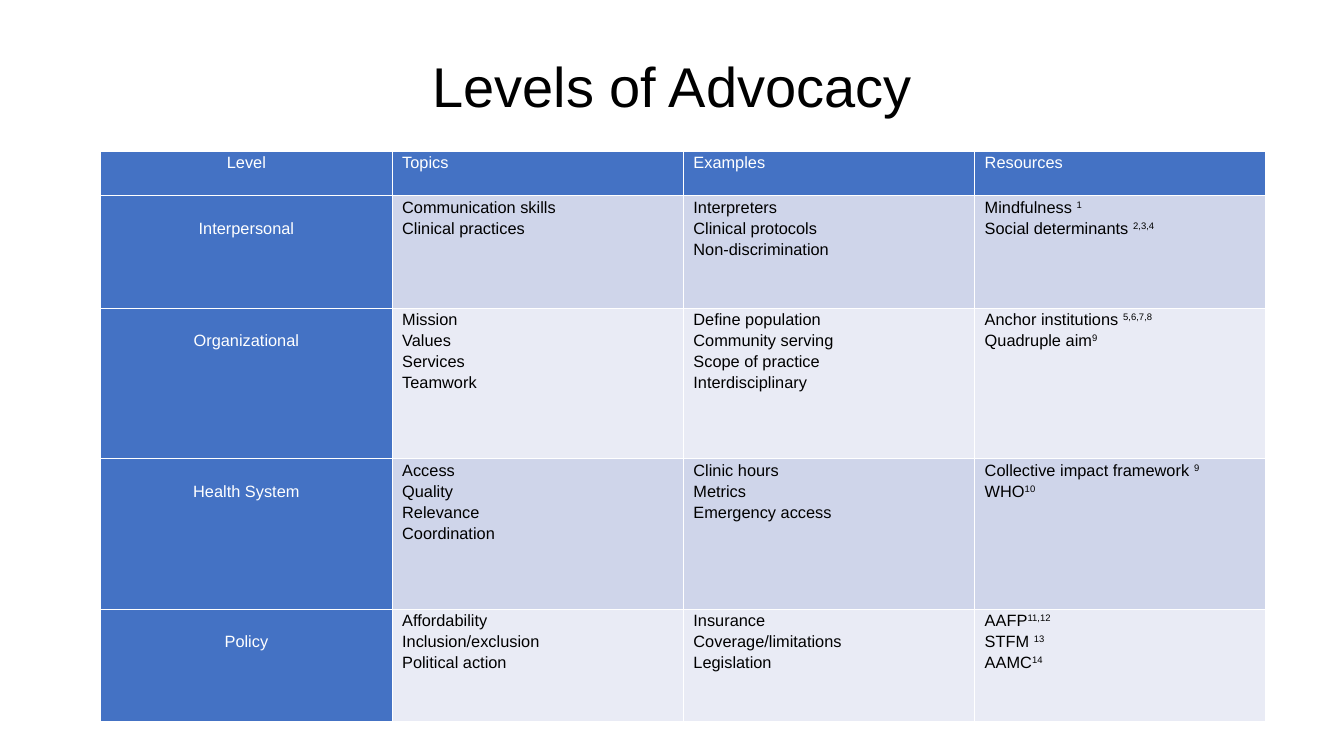
"""Build the Levels of Advocacy table slide."""
from dataclasses import dataclass

from lxml.etree import SubElement
from pptx import Presentation
from pptx.dml.color import RGBColor as RGB
from pptx.enum.text import MSO_ANCHOR as Anchor, PP_ALIGN as Align
from pptx.oxml.ns import qn
from pptx.util import Pt

TITLE = "Levels of Advocacy"
HEADINGS = ["Level", "Topics", "Examples", "Resources"]
LEVELS = [
    ("Interpersonal",
     ["Communication skills", "Clinical practices"],
     ["Interpreters", "Clinical protocols", "Non-discrimination"],
     [("Mindfulness ", "1"), ("Social determinants ", "2,3,4")]),
    ("Organizational",
     ["Mission", "Values", "Services", "Teamwork"],
     ["Define population", "Community serving", "Scope of practice", "Interdisciplinary"],
     [("Anchor institutions ", "5,6,7,8"), ("Quadruple aim", "9")]),
    ("Health System",
     ["Access", "Quality", "Relevance", "Coordination"],
     ["Clinic hours", "Metrics", "Emergency access"],
     [("Collective impact framework ", "9"), ("WHO", "10")]),
    ("Policy",
     ["Affordability", "Inclusion/exclusion", "Political action"],
     ["Insurance", "Coverage/limitations", "Legislation"],
     [("AAFP", "11,12"), ("STFM ", "13"), ("AAMC", "14")]),
]
ROW_HEIGHTS = [38, 96.5, 129, 129, 96.5]
COLUMN_WIDTH = 249.7
TABLE_LEFT, TABLE_TOP = 86.4, 129.6


@dataclass(frozen=True)
class Theme:
    font: str = "Arial"
    title_size: int = 48
    table_size: int = 14
    line_spacing: float = 1.15
    border_width: int = 1
    ink: str = "000000"
    white: str = "FFFFFF"
    accent: str = "4472C4"
    bands: tuple = ("CFD5EA", "E9EBF5")


THEME = Theme()


def style(paragraph, size, color, align):
    font = paragraph.font
    font.name, font.size, font.bold = THEME.font, Pt(size), False
    font.color.rgb = RGB.from_string(color)
    paragraph.alignment = align


def add_borders(cell):
    properties = cell._tc.get_or_add_tcPr()
    for position, side in enumerate(("lnL", "lnR", "lnT", "lnB")):
        border = properties.makeelement(qn(f"a:{side}"), {"w": str(Pt(THEME.border_width))})
        fill = SubElement(border, qn("a:solidFill"))
        SubElement(fill, qn("a:srgbClr"), val=THEME.white)
        properties.insert(position, border)


def fill_cell(cell, lines, fill, color, align=Align.LEFT, top=0):
    cell.fill.solid()
    cell.fill.fore_color.rgb = RGB.from_string(fill)
    cell.margin_left = cell.margin_right = Pt(8.64)
    cell.margin_top, cell.margin_bottom = Pt(top), Pt(0)
    cell.vertical_anchor = Anchor.TOP
    frame = cell.text_frame
    for index, line in enumerate(lines):
        wording, reference = line if isinstance(line, tuple) else (line, "")
        paragraph = frame.add_paragraph() if index else frame.paragraphs[0]
        style(paragraph, THEME.table_size, color, align)
        paragraph.line_spacing = THEME.line_spacing
        paragraph.add_run().text = wording
        if reference:
            superscript = paragraph.add_run()
            superscript.text = reference
            superscript._r.get_or_add_rPr().set("baseline", "30000")
    add_borders(cell)


def add_title(slide):
    title = slide.shapes.title
    title.left, title.top, title.width, title.height = Pt(79.2), Pt(34.56), Pt(993.6), Pt(125.28)
    frame = title.text_frame
    frame.text = TITLE
    frame.vertical_anchor = Anchor.TOP
    frame.margin_top = Pt(9.5)
    style(frame.paragraphs[0], THEME.title_size, THEME.ink, Align.CENTER)


def add_levels(slide):
    table = slide.shapes.add_table(
        len(ROW_HEIGHTS), len(HEADINGS), Pt(TABLE_LEFT), Pt(TABLE_TOP),
        Pt(COLUMN_WIDTH * len(HEADINGS)), Pt(sum(ROW_HEIGHTS))).table
    table.first_col = True
    table.horz_banding = False
    for column in table.columns:
        column.width = Pt(COLUMN_WIDTH)
    for row, height in zip(table.rows, ROW_HEIGHTS):
        row.height = Pt(height)
    for column, heading in enumerate(HEADINGS):
        align = Align.LEFT if column else Align.CENTER
        fill_cell(table.cell(0, column), [heading], THEME.accent, THEME.white, align)
    for row, (level, *details) in enumerate(LEVELS, 1):
        fill_cell(table.cell(row, 0), [level], THEME.accent, THEME.white, Align.CENTER, top=18)
        band = THEME.bands[(row - 1) % len(THEME.bands)]
        for column, lines in enumerate(details, 1):
            fill_cell(table.cell(row, column), lines, band, THEME.ink)


def main():
    deck = Presentation()
    deck.slide_width, deck.slide_height = Pt(1152), Pt(648)
    slide = deck.slides.add_slide(deck.slide_layouts[5])
    add_title(slide)
    add_levels(slide)
    deck.save("out.pptx")


if __name__ == "__main__":
    main()
